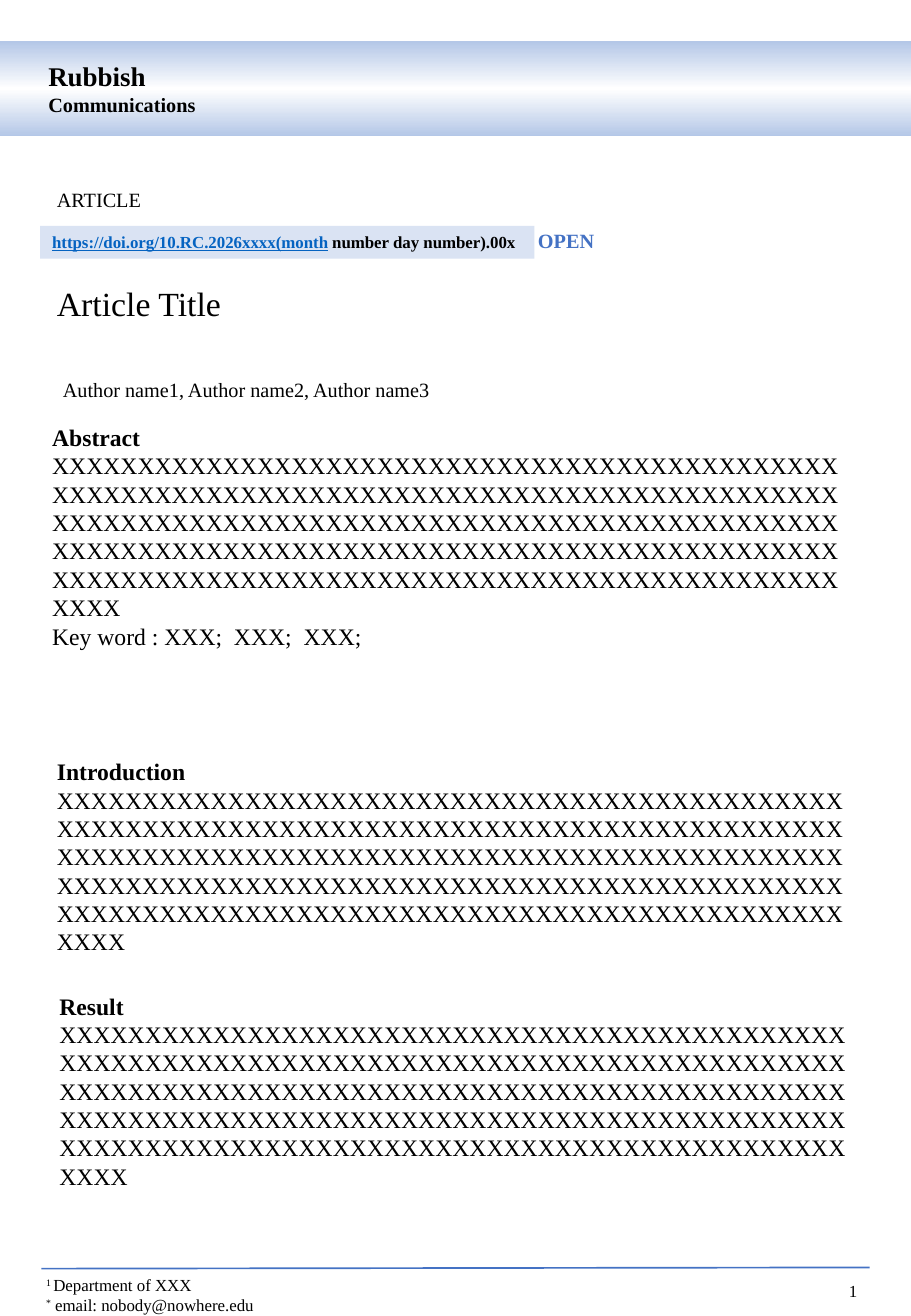
from copy import deepcopy

from pptx import Presentation
from pptx.dml.color import RGBColor
from pptx.enum import shapes, text
from pptx.oxml.ns import qn
from pptx.util import Pt

FONT = "Times New Roman"
BLACK, BLUE, LINK = "000000", "4472C4", "0563C1"
PALE_BLUE, BAND_BLUE, WHITE = "DAE3F3", "B4C7E7", "FFFFFF"
FILLER = "X" * 234


def color(value):
    return RGBColor.from_string(value)


def add_band(page, left, top, width, height, stops):
    """Add a rectangle with a vertical gradient through evenly spaced colours."""
    band = page.shapes.add_shape(
        shapes.MSO_SHAPE.RECTANGLE, Pt(left), Pt(top), Pt(width), Pt(height))
    band.shadow.inherit = False
    band.line.fill.background()
    band.fill.gradient()
    band.fill.gradient_angle = 90
    stop_list = band._element.spPr.find(".//" + qn("a:gsLst"))
    while len(stop_list) < len(stops):
        stop_list.append(deepcopy(stop_list[0]))
    for index, stop in enumerate(band.fill.gradient_stops):
        stop.color.rgb = color(stops[index])
        stop.position = index / (len(stops) - 1)


def add_box(page, left, top, width, height, wrap=True):
    box = page.shapes.add_textbox(Pt(left), Pt(top), Pt(width), Pt(height))
    box.text_frame.word_wrap = wrap
    box.text_frame.auto_size = text.MSO_AUTO_SIZE.SHAPE_TO_FIT_TEXT
    return box


def add_para(box, words, size, bold=False, fill=BLACK, align=None):
    """Fill the box's empty first paragraph, or add one after the last."""
    frame = box.text_frame
    para = frame.paragraphs[0]
    if para.runs:
        para = frame.add_paragraph()
    para.alignment = align
    para.font.name = FONT
    para.font.size = Pt(size)
    para.font.bold = bold
    para.font.color.rgb = color(fill)
    add_span(para, words)
    return para


def add_span(para, words):
    span = para.add_run()
    span.text = words
    return span


def add_label(page, words, place, size, bold=False, fill=BLACK, wrap=False):
    add_para(add_box(page, *place, wrap), words, size, bold, fill)


def add_masthead(page):
    add_band(page, 0, 24.5, 540, 56.2, [BAND_BLUE, WHITE, BAND_BLUE])
    box = add_box(page, 21.6, 31.7, 103, 41, wrap=False)
    add_para(box, "Rubbish", 16, bold=True)
    add_para(box, "Communications", 12, bold=True)


def add_doi(page):
    box = add_box(page, 23.8, 133.9, 293, 19.4, wrap=False)
    box.fill.solid()
    box.fill.fore_color.rgb = color(PALE_BLUE)
    para = add_para(box, "https://doi.org/10.RC.2026xxxx(month", 10, bold=True)
    address = para.runs[0].font
    address.underline = True
    address.color.rgb = color(LINK)
    add_span(para, " number day number).00x")


def add_section(page, heading, place, closing=(), align=None):
    box = add_box(page, *place)
    add_para(box, heading, 14, bold=True, align=align)
    for words in (FILLER, *closing):
        add_para(box, words, 14, align=align)


def add_footer(page):
    rule = page.shapes.add_connector(
        shapes.MSO_CONNECTOR.STRAIGHT, Pt(24.5), Pt(751.7), Pt(515.5), Pt(751))
    rule.line.color.rgb = color(BLUE)
    rule.line.width = Pt(1)
    properties = rule._element.spPr
    properties.append(properties.makeelement(qn("a:effectLst"), {}))

    box = add_box(page, 20.2, 751.7, 491, 31.7)
    for mark, note in (("1 ", "Department of XXX"),
                       ("*", " email: nobody@nowhere.edu")):
        para = add_para(box, mark, 10)
        para.runs[0]._r.get_or_add_rPr().set("baseline", "30000")
        add_span(para, note)
    add_label(page, "1", (496.1, 755.3, 19.4, 19.4), 10)


def main():
    deck = Presentation()
    deck.slide_width, deck.slide_height = Pt(540), Pt(779.76)
    page = deck.slides.add_slide(deck.slide_layouts[6])

    add_masthead(page)
    add_label(page, "ARTICLE", (26.6, 107.3, 65.5, 21.6), 12)
    add_doi(page)
    add_label(page, "OPEN", (311.8, 131.8, 49, 21.6), 12, bold=True, fill=BLUE)
    add_label(page, "Article Title", (26.6, 164.2, 503.3, 31.5), 20, wrap=True)
    add_label(page, "Author name1, Author name2, Author name3",
              (30.2, 220.3, 503.3, 31.7), 12, wrap=True)
    add_section(page, "Abstract", (23.8, 247, 486, 143.3),
                ["Key word : XXX;  XXX;  XXX;"], text.PP_ALIGN.JUSTIFY)
    add_section(page, "Introduction", (26.6, 445, 483.8, 126))
    add_section(page, "Result", (28.1, 583.9, 483.8, 126))
    add_footer(page)

    deck.save("out.pptx")


if __name__ == "__main__":
    main()
